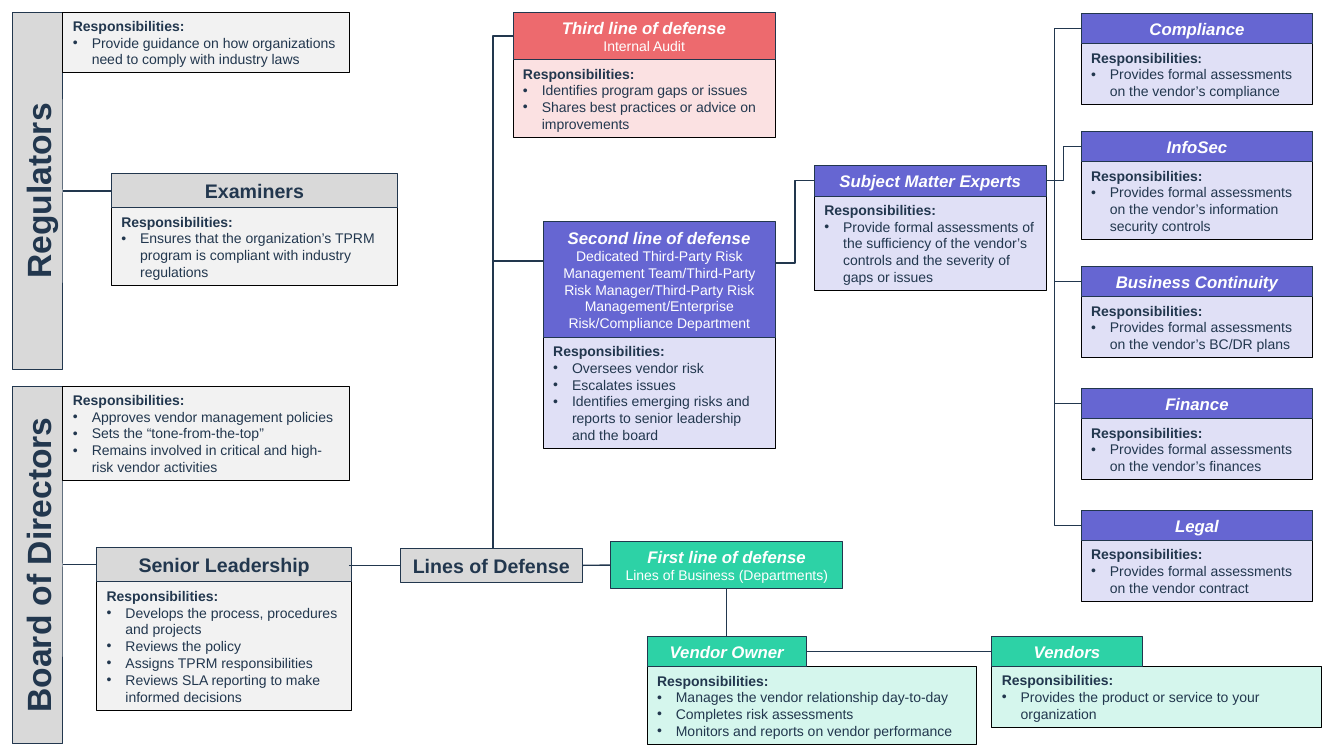
import pptx
import pptx.util
import pptx.dml.color
import pptx.enum.shapes
import pptx.enum.text
import pptx.oxml.ns
from lxml import etree

RGB = pptx.dml.color.RGBColor
NAVY = RGB(0x22, 0x37, 0x4E)
WHITE = RGB(0xFF, 0xFF, 0xFF)
BLACK = RGB(0x00, 0x00, 0x00)
PALE = RGB(0xF2, 0xF2, 0xF2)
GRAY = RGB(0xD9, 0xD9, 0xD9)
GREEN = RGB(0x2D, 0xD2, 0xA6)
RED = RGB(0xED, 0x6A, 0x6E)
BLUE = RGB(0x66, 0x66, 0xD2)

COLS, ROWS = 133.33, 75
CELL = pptx.util.Inches(0.1)
LINE = 1.68
HEAD, WIDE = 3.05, 3.37
FONT = "Arial"
qn = pptx.oxml.ns.qn


def cells(*sizes):
    return [round(size * CELL) for size in sizes]


def panel(slide, box, fill, edge, tint=None, turn=0):
    """Add an empty rectangle and return its text frame."""
    shape = slide.shapes.add_shape(
        pptx.enum.shapes.MSO_SHAPE.RECTANGLE, *cells(*box))
    shape.shadow.inherit = False
    shape.rotation = turn
    shape.fill.solid()
    shape.fill.fore_color.rgb = fill
    if tint:
        color = shape.fill._xPr.find(".//" + qn("a:srgbClr"))
        etree.SubElement(color, qn("a:alpha"), val=str(tint * 1000))
    shape.line.color.rgb = edge
    shape.line.width = pptx.util.Pt(0.75)
    frame = shape.text_frame
    frame.word_wrap = True
    frame.auto_size = pptx.enum.text.MSO_AUTO_SIZE.SHAPE_TO_FIT_TEXT
    return frame


def write(para, text, size, color, bold=False, slant=False, font=FONT):
    run = para.add_run()
    run.text = text
    run.font.name = font
    run.font.size = pptx.util.Pt(size)
    run.font.color.rgb = color
    run.font.bold = bold
    run.font.italic = slant


def head(slide, box, title, fill, sub=None):
    frame = panel(slide, box, fill, NAVY)
    para = frame.paragraphs[0]
    para.alignment = pptx.enum.text.PP_ALIGN.CENTER
    if fill == GRAY:
        write(para, title, 14, NAVY, bold=True)
    else:
        write(para, title, 12, WHITE, bold=True, slant=True)
    if sub:
        para = frame.add_paragraph()
        para.alignment = pptx.enum.text.PP_ALIGN.CENTER
        write(para, sub, 10, WHITE)


def duties(slide, x, y, w, lines, points, fill, colon=FONT):
    """Add a list of duties, as tall as its count of text lines."""
    tint = None if fill == PALE else 20
    frame = panel(slide, (x, y, w, 1 + LINE * lines), fill, BLACK, tint)
    para = frame.paragraphs[0]
    para.alignment = pptx.enum.text.PP_ALIGN.LEFT
    write(para, "Responsibilities", 10, NAVY, bold=True)
    write(para, ":", 10, NAVY, bold=True, font=colon)
    for point in points:
        para = frame.add_paragraph()
        para.alignment = pptx.enum.text.PP_ALIGN.LEFT
        props = para._p.get_or_add_pPr()
        indent = round(1.87 * CELL)
        props.set("marL", str(indent))
        props.set("indent", str(-indent))
        etree.SubElement(props, qn("a:buFont"), typeface=FONT)
        etree.SubElement(props, qn("a:buChar"), char="•")
        write(para, point, 10, NAVY)


def card(slide, x, y, w, title, fill, lines, points,
         sub=None, rows=0, title_w=None, colon=FONT):
    """Stack a heading on its duties; return the heading's box."""
    tall = WIDE if fill == GRAY else HEAD + LINE * rows
    box = (x, y, title_w or w, tall)
    duties(slide, x, y + tall, w, lines, points,
           PALE if fill == GRAY else fill, colon)
    head(slide, box, title, fill, sub)
    return box


def west(box):
    return box[0], box[1] + box[3] / 2


def east(box):
    return box[0] + box[2], box[1] + box[3] / 2


def link(slide, start, end, bend=None):
    """Join two points; bend is the share of the width before the turn."""
    kinds = pptx.enum.shapes.MSO_CONNECTOR
    kind = kinds.STRAIGHT if bend is None else kinds.ELBOW
    wire = slide.shapes.add_connector(kind, *cells(*start, *end))
    wire.line.color.rgb = NAVY
    wire.line.width = pptx.util.Pt(1)
    props = wire._element.spPr
    etree.SubElement(props, qn("a:effectLst"))
    if bend is not None:
        guides = props.find(".//" + qn("a:avLst"))
        etree.SubElement(guides, qn("a:gd"), name="adj1",
                         fmla=f"val {round(bend * 100000)}")


def wing(slide, box, title, lines, points, unit):
    """Draw a side bar with its duties and the unit below them."""
    x, y, w, h = box
    thick = 5.05
    frame = panel(slide, (x + (thick - h) / 2, y + (h - thick) / 2, h, thick),
                  GRAY, NAVY, turn=270)
    frame.paragraphs[0].alignment = pptx.enum.text.PP_ALIGN.CENTER
    write(frame.paragraphs[0], title, 24, NAVY, bold=True)
    duties(slide, x + thick, y, 28.4, lines, points, PALE)
    dx, width, name, count, tasks = unit
    spot = card(slide, x + dx, y + 16.05, width, name, GRAY, count, tasks)
    link(slide, (x + thick, west(spot)[1]), west(spot))
    return spot


def defense(slide, box):
    """Draw the hub and the three lines of defense."""
    x, y, w, h = box
    hub = (x + 0.3, y + 53.2, 18.1, WIDE)
    head(slide, hub, "Lines of Defense", GRAY)
    link(slide, (x - 4.8, west(hub)[1]), west(hub))
    first = (x + 21.2, y + 52.5, 23, HEAD + LINE)
    head(slide, first, "First line of defense", GREEN,
         "Lines of Business (Departments)")
    link(slide, east(hub), west(first))
    third = card(slide, x + 11.5, y, 26, "Third line of defense", RED, 4,
                 ["Identifies program gaps or issues",
                  "Shares best practices or advice on improvements"],
                 "Internal Audit", 1)
    second = card(slide, x + 14.5, y + 20.8, 23, "Second line of defense",
                  BLUE, 6,
                  ["Oversees vendor risk", "Escalates issues",
                   "Identifies emerging risks and reports to senior "
                   "leadership and the board"],
                  "Dedicated Third-Party Risk Management Team/Third-Party "
                  "Risk Manager/Third-Party Risk Management/Enterprise "
                  "Risk/Compliance Department", 5)
    trunk = x + 9.5
    link(slide, (trunk, hub[1]), west(third), 0)
    link(slide, (trunk, y + 24.7), (second[0], y + 24.7))
    return first, second


def vendors(slide, box, first):
    x, y, w, h = box
    owner = card(slide, x, y, 32.7, "Vendor Owner", GREEN, 4,
                 ["Manages the vendor relationship day-to-day",
                  "Completes risk assessments",
                  "Monitors and reports on vendor performance"], title_w=15.8)
    seller = card(slide, x + w - 32.7, y, 32.7, "Vendors", GREEN, 3,
                  ["Provides the product or service to your organization"],
                  title_w=14.9)
    mid = first[0] + first[2] / 2
    link(slide, (mid, y), (mid, first[1] + first[3]))
    link(slide, east(owner), west(seller))


def experts(slide, box, second):
    x, y, w, h = box
    chief = card(slide, x, y + 15.1, 23, "Subject Matter Experts", BLUE, 5,
                 ["Provide formal assessments of the sufficiency of the "
                  "vendor’s controls and the severity of gaps or issues"])
    link(slide, (east(second)[0], y + 24.8), west(chief), 0.5)
    trunk = x + 23.8, west(chief)[1]
    fields = [
        (0, "Compliance", 3, "’s compliance"),
        (11.7, "InfoSec", 4, "’s information security controls"),
        (25.1, "Business Continuity", 3, "’s BC/DR plans"),
        (37.2, "Finance", 3, "’s finances"),
        (49.3, "Legal", 3, " contract"),
    ]
    for dy, name, lines, topic in fields:
        spot = card(slide, x + w - 23, y + dy, 23, name, BLUE, lines,
                    ["Provides formal assessments on the vendor" + topic],
                    colon="Calibri" if name == "Compliance" else FONT)
        if name == "InfoSec":
            link(slide, east(chief), west(spot), 0.5)
        else:
            link(slide, trunk, west(spot), 0)


def main():
    deck = pptx.Presentation()
    deck.slide_width, deck.slide_height = cells(COLS, ROWS)
    slide = deck.slides.add_slide(deck.slide_layouts[6])
    wing(slide, (1.2, 1.2, 38.2, 35.5), "Regulators", 3,
         ["Provide guidance on how organizations need to comply with "
          "industry laws"],
         (9.85, 28.4, "Examiners", 4,
          ["Ensures that the organization’s TPRM program is compliant with "
           "industry regulations"]))
    wing(slide, (1.2, 38.3, 33.7, 35.5), "Board of Directors", 5,
         ["Approves vendor management policies",
          "Sets the “tone-from-the-top”",
          "Remains involved in critical and high-risk vendor activities"],
         (8.4, 25.3, "Senior Leadership", 7,
          ["Develops the process, procedures and projects",
           "Reviews the policy", "Assigns TPRM responsibilities",
           "Reviews SLA reporting to make informed decisions"]))
    first, second = defense(slide, (39.4, 1.2, 44.2, 57.2))
    vendors(slide, (64.2, 63.1, 66.9, 10.8), first)
    experts(slide, (80.8, 1.3, 49.45, 58.4), second)
    deck.save("out.pptx")


if __name__ == "__main__":
    main()
